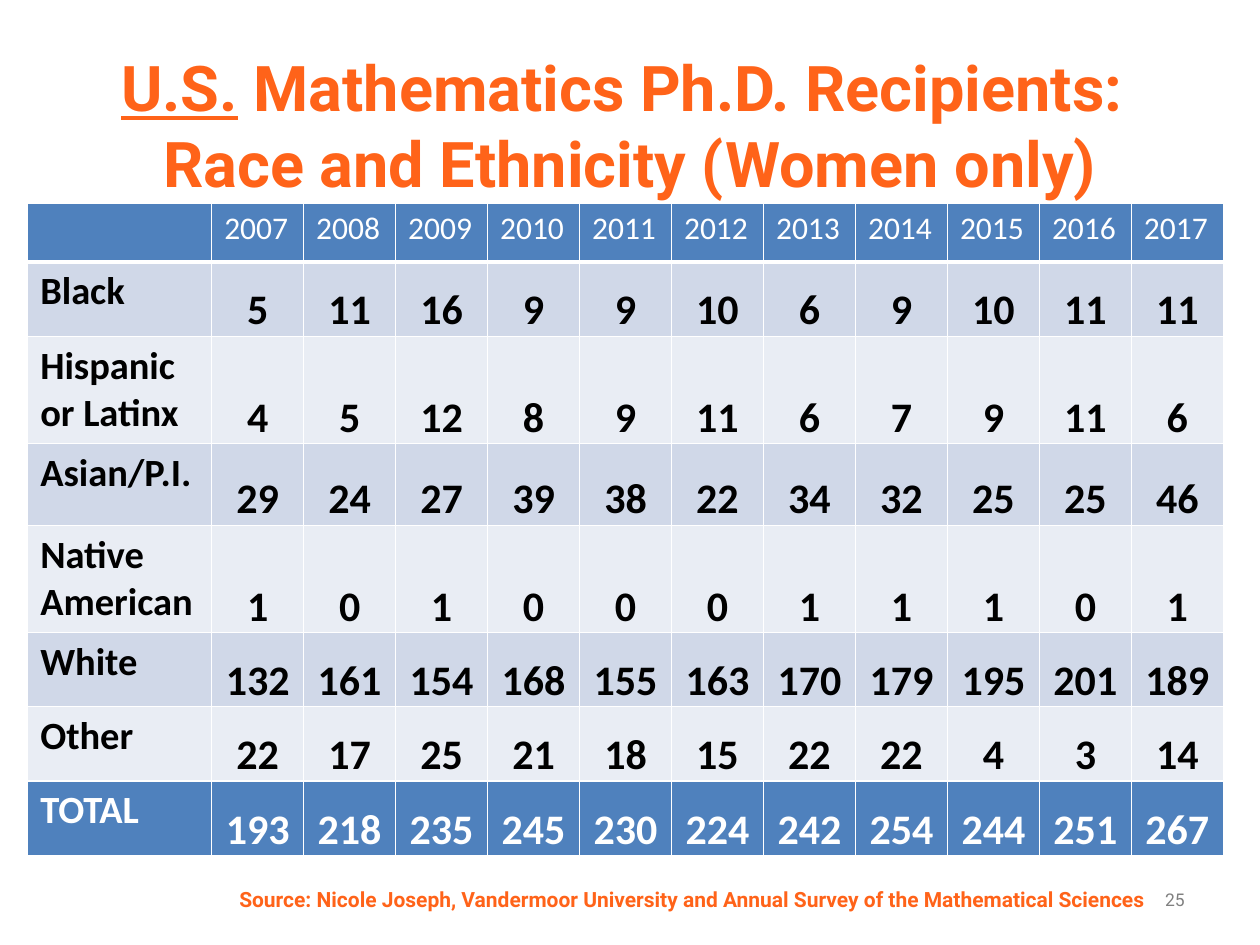
from dataclasses import dataclass

from lxml.etree import SubElement
from pptx import Presentation
from pptx.dml.color import RGBColor
from pptx.enum.text import MSO_ANCHOR, PP_ALIGN
from pptx.oxml.ns import qn
from pptx.util import Inches, Pt

ORANGE = RGBColor(0xFF, 0x63, 0x19)
BLUE = RGBColor(0x4F, 0x81, 0xBD)
BAND_DARK = RGBColor(0xD0, 0xD8, 0xE8)
BAND_LIGHT = RGBColor(0xE9, 0xED, 0xF4)
WHITE = RGBColor(0xFF, 0xFF, 0xFF)
BLACK = RGBColor(0, 0, 0)
GRAY = RGBColor(0x80, 0x80, 0x80)

SLIDE_WIDTH = Inches(10)
SLIDE_HEIGHT = Inches(7.5)
LABEL_WIDTH = Inches(1.46)
YEAR_WIDTH = Inches(0.73)
HEADER_HEIGHT = 0.47
YEARS = range(2007, 2018)


@dataclass(frozen=True)
class Group:
    label: str
    height: float
    counts: tuple[int, ...]


@dataclass(frozen=True)
class Area:
    left: float
    top: float
    width: float
    height: float

    def place(self) -> tuple[int, int, int, int]:
        return (round(self.left * SLIDE_WIDTH), round(self.top * SLIDE_HEIGHT),
                round(self.width * SLIDE_WIDTH), round(self.height * SLIDE_HEIGHT))


GROUPS = (
    Group("Black", 0.59, (5, 11, 16, 9, 9, 10, 6, 9, 10, 11, 11)),
    Group("Hispanic or Latinx", 0.85, (4, 5, 12, 8, 9, 11, 6, 7, 9, 11, 6)),
    Group("Asian/P.I.", 0.65, (29, 24, 27, 39, 38, 22, 34, 32, 25, 25, 46)),
    Group("Native American", 0.85, (1, 0, 1, 0, 0, 0, 1, 1, 1, 0, 1)),
    Group("White", 0.59, (132, 161, 154, 168, 155, 163, 170, 179, 195, 201, 189)),
    Group("Other", 0.59, (22, 17, 25, 21, 18, 15, 22, 22, 4, 3, 14)),
    Group("TOTAL", 0.59, (193, 218, 235, 245, 230, 224, 242, 254, 244, 251, 267)),
)


def write(paragraph, text: str, *, size: float, color: RGBColor, font: str = "Calibri",
          bold: bool = False, underline: bool = False, align=PP_ALIGN.LEFT) -> None:
    paragraph.alignment = align
    for index, line in enumerate(text.split("\n")):
        if index:
            paragraph.add_line_break()
        run = paragraph.add_run()
        run.text = line
        run.font.name = font
        run.font.size = Pt(size)
        run.font.bold = bold
        run.font.underline = underline
        run.font.color.rgb = color


def add_text_area(slide, area: Area, anchor=MSO_ANCHOR.MIDDLE):
    frame = slide.shapes.add_textbox(*area.place()).text_frame
    frame.word_wrap = True
    frame.vertical_anchor = anchor
    return frame.paragraphs[0]


def style_cell(cell, fill: RGBColor, bottom_width: float = 1) -> None:
    properties = cell._tc.get_or_add_tcPr()
    for side, width in (("L", 1), ("R", 1), ("T", 1), ("B", bottom_width)):
        border = SubElement(properties, qn(f"a:ln{side}"), w=str(Pt(width)))
        solid = SubElement(border, qn("a:solidFill"))
        SubElement(solid, qn("a:srgbClr"), val=str(WHITE))
    cell.fill.solid()
    cell.fill.fore_color.rgb = fill


def add_header(table) -> None:
    style_cell(table.cell(0, 0), BLUE, bottom_width=3)
    for column, year in enumerate(YEARS, 1):
        cell = table.cell(0, column)
        style_cell(cell, BLUE, bottom_width=3)
        write(cell.text_frame.paragraphs[0], str(year), size=18, color=WHITE)


def add_group(table, row: int, group: Group) -> None:
    is_total = row == len(GROUPS)
    fill = BLUE if is_total else BAND_DARK if row % 2 else BAND_LIGHT
    ink = WHITE if is_total else BLACK
    table.rows[row].height = Inches(group.height)
    label = table.cell(row, 0)
    style_cell(label, fill)
    write(label.text_frame.paragraphs[0], group.label, size=22, color=ink, bold=True)
    for column, count in enumerate(group.counts, 1):
        cell = table.cell(row, column)
        style_cell(cell, fill)
        cell.vertical_anchor = MSO_ANCHOR.BOTTOM
        cell.margin_left = cell.margin_right = cell.margin_top = Inches(0.01)
        cell.margin_bottom = 0
        write(cell.text_frame.paragraphs[0], str(count), size=24, color=ink,
              bold=True, align=PP_ALIGN.CENTER)


def add_recipients(slide) -> None:
    heights = HEADER_HEIGHT + sum(group.height for group in GROUPS)
    table = slide.shapes.add_table(
        len(GROUPS) + 1, len(YEARS) + 1, Inches(0.22), Inches(1.61),
        LABEL_WIDTH + len(YEARS) * YEAR_WIDTH, Inches(heights)).table
    table.first_row = table.horz_banding = False
    for column in table.columns:
        column.width = YEAR_WIDTH
    table.columns[0].width = LABEL_WIDTH
    table.rows[0].height = Inches(HEADER_HEIGHT)
    add_header(table)
    for row, group in enumerate(GROUPS, 1):
        add_group(table, row, group)


def add_title(slide) -> None:
    title = add_text_area(slide, Area(0.028, 0.045, 0.944, 0.085), MSO_ANCHOR.TOP)
    heading = {"size": 36, "font": "Roboto", "color": ORANGE, "bold": True,
               "align": PP_ALIGN.CENTER}
    write(title, "U.S.", underline=True, **heading)
    write(title, " Mathematics Ph.D. Recipients: \nRace and Ethnicity (Women only)", **heading)
    before = SubElement(title._p.get_or_add_pPr(), qn("a:spcBef"))
    SubElement(before, qn("a:spcPct"), val="20000")


def main() -> None:
    deck = Presentation()
    deck.slide_width, deck.slide_height = SLIDE_WIDTH, SLIDE_HEIGHT
    slide = deck.slides.add_slide(deck.slide_layouts[6])
    page_number = add_text_area(slide, Area(0.717, 0.932, 0.233, 0.039))
    write(page_number, "25", size=10, font="Roboto", color=GRAY, align=PP_ALIGN.RIGHT)
    add_title(slide)
    add_recipients(slide)
    source = add_text_area(slide, Area(0.088, 0.905, 0.831, 0.093))
    write(source, "Source: Nicole Joseph, Vandermoor University and Annual Survey of the "
          "Mathematical Sciences", size=12, font="Roboto", color=ORANGE, bold=True,
          align=PP_ALIGN.RIGHT)
    deck.save("out.pptx")


if __name__ == "__main__":
    main()
